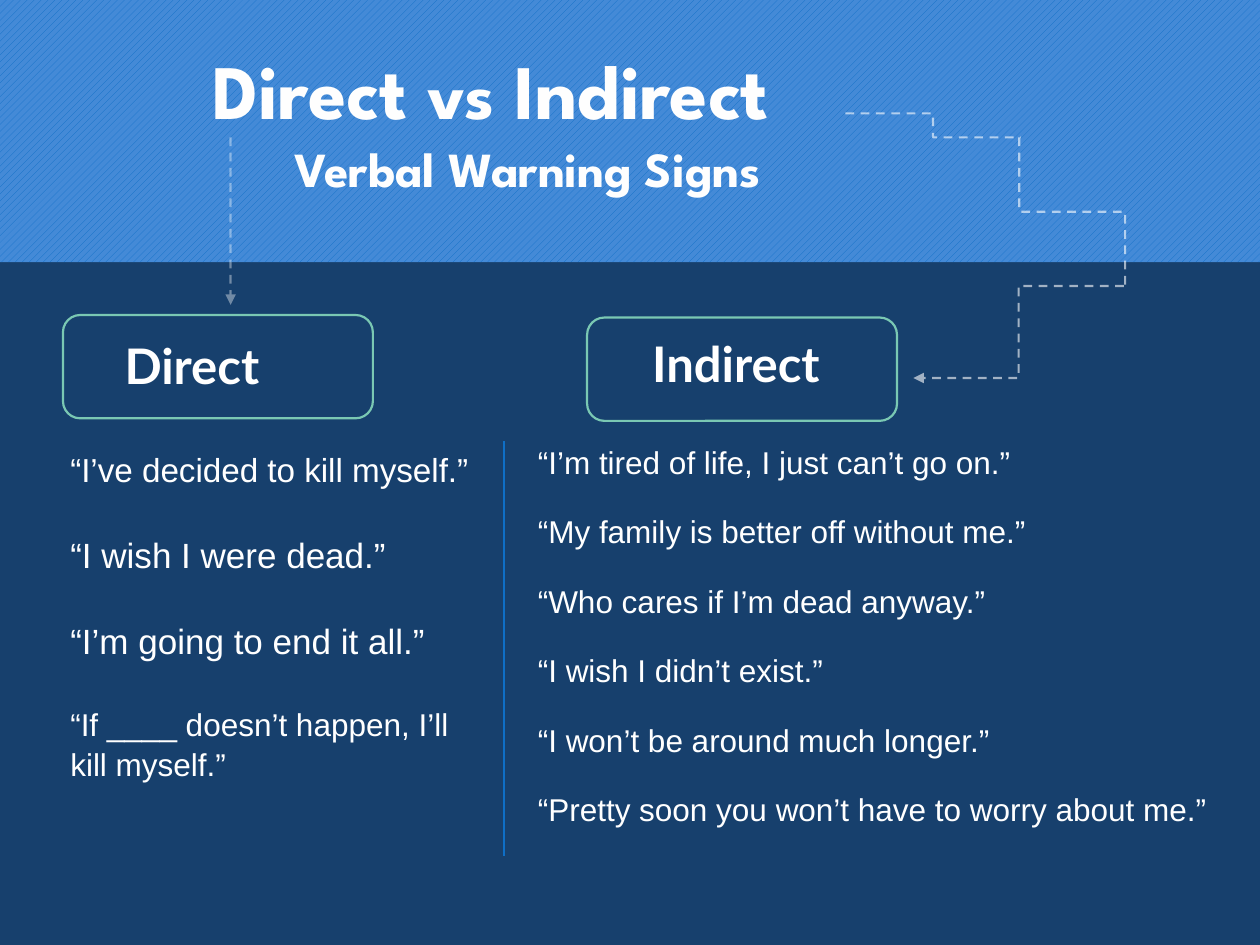
from pptx import Presentation
from pptx.dml.color import RGBColor
from pptx.enum.dml import MSO_LINE, MSO_PATTERN
from pptx.enum.shapes import MSO_CONNECTOR, MSO_SHAPE
from pptx.enum.text import PP_ALIGN
from pptx.oxml import parse_xml
from pptx.oxml.ns import nsdecls, qn
from pptx.util import Inches, Pt
from lxml.etree import SubElement

COLORS = {
    "navy": "17406D", "band": "448AD7", "blue": "0F6FC6",
    "mint": "7AC8B3", "white": "FFFFFF", "title": "FEFEFE",
}
DIRECT = [
    ("“I’ve decided to kill myself.”", 19),
    ("“I wish I were dead.”", 20),
    ("“I’m going to end it all.”", 20),
    ("“If ____ doesn’t happen, I’ll kill myself.”", 18),
]
INDIRECT = [(text, 18) for text in (
    "“I’m tired of life, I just can’t go on.”",
    "“My family is better off without me.”",
    "“Who cares if I’m dead anyway.”",
    "“I wish I didn’t exist.”",
    "“I won’t be around much longer.”",
    "“Pretty soon you won’t have to worry about me.”",
)]


def rgb(name):
    return RGBColor.from_string(COLORS[name])


def add_text_frame(slide, x, y, w, h):
    tf = slide.shapes.add_textbox(Inches(x), Inches(y), Inches(w), Inches(h)).text_frame
    tf.word_wrap = True
    return tf


def add_paragraph(tf, first, **formats):
    p = tf.paragraphs[0] if first else tf.add_paragraph()
    for name, value in formats.items():
        setattr(p, name, value)
    return p


def add_run(p, text, font, size, color="white", bold=False):
    r = p.add_run()
    r.text = text
    for name, value in {"name": font, "size": Pt(size), "bold": bold}.items():
        setattr(r.font, name, value)
    r.font.color.rgb = rgb(color)


def add_band(slide, x, y, w, h):
    s = slide.shapes.add_shape(MSO_SHAPE.RECTANGLE, Inches(x), Inches(y), Inches(w), Inches(h))
    s.shadow.inherit = False
    s.fill.patterned()
    s.fill.pattern = MSO_PATTERN.WIDE_UPWARD_DIAGONAL
    s.fill.fore_color.rgb = rgb("blue")
    s.fill.back_color.rgb = rgb("band")
    s.line.fill.background()


def add_title(slide, x, y, w, h):
    tf = add_text_frame(slide, x, y, w, h)
    p = add_paragraph(tf, True, line_spacing=Pt(36))
    for text, size in (("Direct ", 44), ("vs", 40), (" Indirect", 44)):
        add_run(p, text, "League Spartan", size, "title", True)
    p = add_paragraph(tf, False, line_spacing=Pt(36))
    p._p.get_or_add_pPr().set("marL", str(Inches(0.65)))
    add_run(p, "Verbal Warning Signs", "League Spartan", 28, "title", True)


def add_heading(slide, x, y, text, label, align):
    """Rounded frame with a label box given as offsets from the frame and a width."""
    s = slide.shapes.add_shape(MSO_SHAPE.ROUNDED_RECTANGLE, Inches(x), Inches(y),
                               Inches(2.46), Inches(0.82))
    s.shadow.inherit = False
    s.fill.background()
    s.line.color.rgb = rgb("mint")
    s.line.width = Pt(1.25)
    dx, dy, w = label
    tf = add_text_frame(slide, x + dx, y + dy, w, 0.53)
    p = add_paragraph(tf, True, line_spacing=0.9, alignment=align)
    add_run(p, text, "Lato", 28, bold=True)


def add_quotes(slide, x, y, w, h, quotes, spacing, gap):
    tf = add_text_frame(slide, x, y, w, h)
    for i, (text, size) in enumerate(quotes):
        p = add_paragraph(tf, i == 0, line_spacing=spacing, space_before=Pt(gap if i else 0))
        add_run(p, text, "Arial", size)
    return tf


def add_text_shadow(tf):
    for p in tf.paragraphs:
        for r in p.runs:
            fill = r.font._element.find(qn("a:solidFill"))
            fill.addnext(parse_xml(
                f'<a:effectLst {nsdecls("a")}><a:outerShdw blurRad="38100" dist="38100" '
                'dir="2700000" algn="tl"><a:srgbClr val="000000"><a:alpha val="43000"/>'
                '</a:srgbClr></a:outerShdw></a:effectLst>'))


def add_line(slide, kind, start, end, color, width):
    c = slide.shapes.add_connector(kind, *map(Inches, start + end))
    c.line.color.rgb = rgb(color)
    c.line.width = Pt(width)
    SubElement(c._element.spPr, qn("a:effectLst"))
    return c


def add_dashed(slide, kind, start, end, opacity, arrow=False, rotation=0):
    c = add_line(slide, kind, start, end, "white", 1.25)
    c.line.dash_style = MSO_LINE.DASH
    ln = c.line._get_or_add_ln()
    SubElement(ln.find(".//" + qn("a:srgbClr")), qn("a:alpha")).set("val", str(opacity * 1000))
    if arrow:
        SubElement(ln, qn("a:tailEnd")).set("type", "triangle")
    if rotation:
        c._element.spPr.find(qn("a:xfrm")).set("rot", str(rotation * 60000))


def add_arrows(slide):
    elbow = MSO_CONNECTOR.ELBOW
    add_dashed(slide, MSO_CONNECTOR.STRAIGHT, (1.83, 1.09), (1.83, 2.42), 38, arrow=True)
    add_dashed(slide, elbow, (8.92, 2.27), (7.25, 3), 60, arrow=True)
    # Turned a quarter so that it leaves downwards
    add_dashed(slide, elbow, (9.1, 1.26), (7.92, 2.1), 60, rotation=270)
    add_dashed(slide, elbow, (6.71, 0.9), (8.1, 1.09), 60)


def main():
    prs = Presentation()
    prs.slide_width, prs.slide_height = Inches(10), Inches(7.5)
    slide = prs.slides.add_slide(prs.slide_layouts[6])
    slide.background.fill.solid()
    slide.background.fill.fore_color.rgb = rgb("navy")

    add_band(slide, 0, 0, 10, 2.08)
    add_text_shadow(add_quotes(slide, 0.46, 3.5, 3.46, 2.49, DIRECT, 1.05, 24))
    add_quotes(slide, 4.17, 3.5, 5.58, 3.1, INDIRECT, 0.9, 20.25)
    add_line(slide, MSO_CONNECTOR.STRAIGHT, (4, 3.5), (4, 6.79), "blue", 1.5)
    add_heading(slide, 0.5, 2.5, "Direct", (0.39, 0.17, 1.67), PP_ALIGN.LEFT)
    add_heading(slide, 4.66, 2.52, "Indirect", (0.31, 0.13, 1.74), PP_ALIGN.CENTER)
    add_title(slide, 1.59, 0.52, 5.93, 1.42)
    add_arrows(slide)
    prs.save("out.pptx")


if __name__ == "__main__":
    main()
